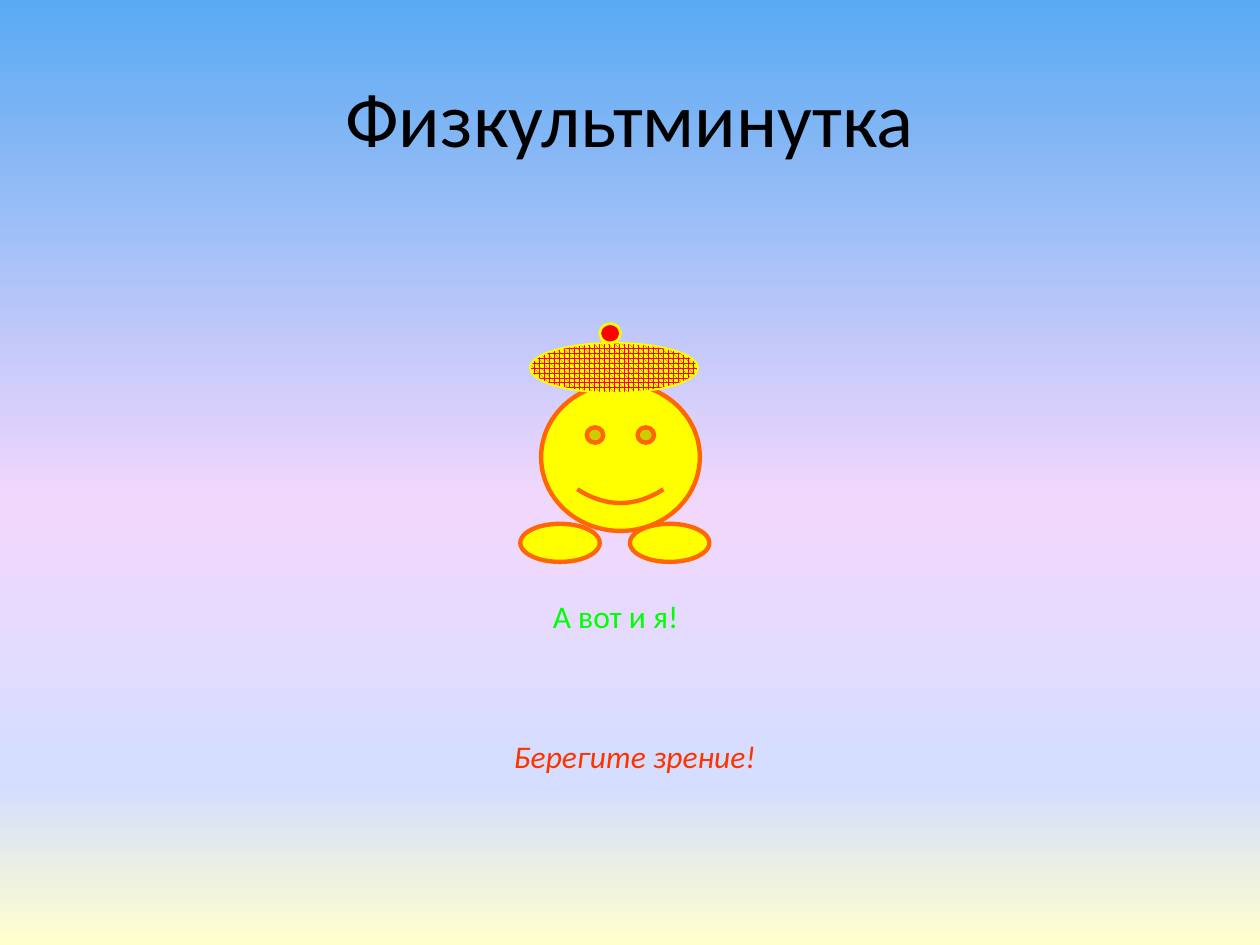
from dataclasses import dataclass

from lxml import etree
from pptx import Presentation
from pptx import util as u
from pptx.dml.color import RGBColor
from pptx.enum import dml, shapes, text
from pptx.oxml.ns import qn

CELL = u.Inches(0.1)  # the slide is a grid of 100 columns by 75 rows
COLUMNS, ROWS = 100, 75


@dataclass(frozen=True)
class Theme:
    font: str = "Calibri"
    title_size: int = 44
    caption_size: int = 18
    ink: str = "000000"
    yellow: str = "FFFF00"
    orange: str = "FF6600"
    red: str = "FF0000"
    green: str = "00FF00"
    warning: str = "FF3300"
    sky: tuple = ((0, "59AAF2"), (53, "F2D7FD"), (83, "D4DEFF"), (100, "FFFFCC"))


THEME = Theme()


def rgb(code):
    return RGBColor.from_string(code)


def grid_box(column, row, columns, rows):
    return tuple(round(cells * CELL) for cells in (column, row, columns, rows))


def inner_box(box, left, top, width, height):
    """Place shares of a box on the slide."""
    x, y, w, h = box
    return (round(x + left * w), round(y + top * h),
            round(width * w), round(height * h))


def add_text(page, box, words, *, size, color, italic=False, wrap=True,
             align=text.PP_ALIGN.LEFT, anchor=text.MSO_ANCHOR.TOP):
    frame = page.shapes.add_textbox(*box).text_frame
    frame.word_wrap = wrap
    frame.vertical_anchor = anchor
    para = frame.paragraphs[0]
    para.alignment = align
    span = para.add_run()
    span.text = words
    span.font.name = THEME.font
    span.font.size = u.Pt(size)
    span.font.italic = italic
    span.font.color.rgb = rgb(color)


def add_part(group, kind, box, *, fill, line, weight):
    part = group.shapes.add_shape(kind, *box)
    part.shadow.inherit = False
    part.fill.solid()
    part.fill.fore_color.rgb = rgb(fill)
    part.line.color.rgb = rgb(line)
    part.line.width = u.Pt(weight)
    return part


def paint_background(page):
    fill = page.background.fill
    fill.gradient()
    fill.gradient_angle = 270  # counter-clockwise, so top to bottom
    stops = page.element.xpath(".//a:gsLst")[0]
    for stop in list(stops):
        stops.remove(stop)
    for percent, color in THEME.sky:
        stop = etree.SubElement(stops, qn("a:gs"), pos=str(percent * 1000))
        etree.SubElement(stop, qn("a:srgbClr"), val=color)


def draw_mascot(page, box):
    group = page.shapes.add_group_shape()
    kinds = shapes.MSO_SHAPE
    body = dict(fill=THEME.yellow, line=THEME.orange, weight=2.5)

    # Face and feet
    add_part(group, kinds.SMILEY_FACE, inner_box(box, 0.11, 0.25, 0.84, 0.62), **body)
    for left in (0.58, 0):
        add_part(group, kinds.OVAL, inner_box(box, left, 0.84, 0.42, 0.16), **body)

    # Checked beret with its pompom
    trim = dict(fill=THEME.red, line=THEME.yellow)
    beret = add_part(group, kinds.OVAL, inner_box(box, 0.05, 0.08, 0.89, 0.21),
                     weight=1, **trim)
    beret.fill.patterned()
    beret.fill.pattern = dml.MSO_PATTERN.SPHERE
    beret.fill.fore_color.rgb = rgb(THEME.red)
    beret.fill.back_color.rgb = rgb(THEME.yellow)
    add_part(group, kinds.OVAL, inner_box(box, 0.42, 0, 0.11, 0.08),
             weight=1.5, **trim)


def build_slide(deck):
    page = deck.slides.add_slide(deck.slide_layouts[6])
    paint_background(page)
    # Title
    add_text(page, grid_box(5, 3, 90, 12.5), "Физкультминутка",
             size=THEME.title_size, color=THEME.ink,
             align=text.PP_ALIGN.CENTER, anchor=text.MSO_ANCHOR.MIDDLE)
    draw_mascot(page, grid_box(41.3, 25.7, 15, 18.9))
    # Captions
    add_text(page, grid_box(42.9, 46.9, 14.7, 4), "А вот и я!",
             size=THEME.caption_size, color=THEME.green, wrap=False)
    add_text(page, grid_box(39.8, 58, 24.7, 4), "Берегите зрение!",
             size=THEME.caption_size, color=THEME.warning, italic=True)


def main():
    deck = Presentation()
    deck.slide_width, deck.slide_height = COLUMNS * CELL, ROWS * CELL
    build_slide(deck)
    deck.save("out.pptx")


if __name__ == "__main__":
    main()
